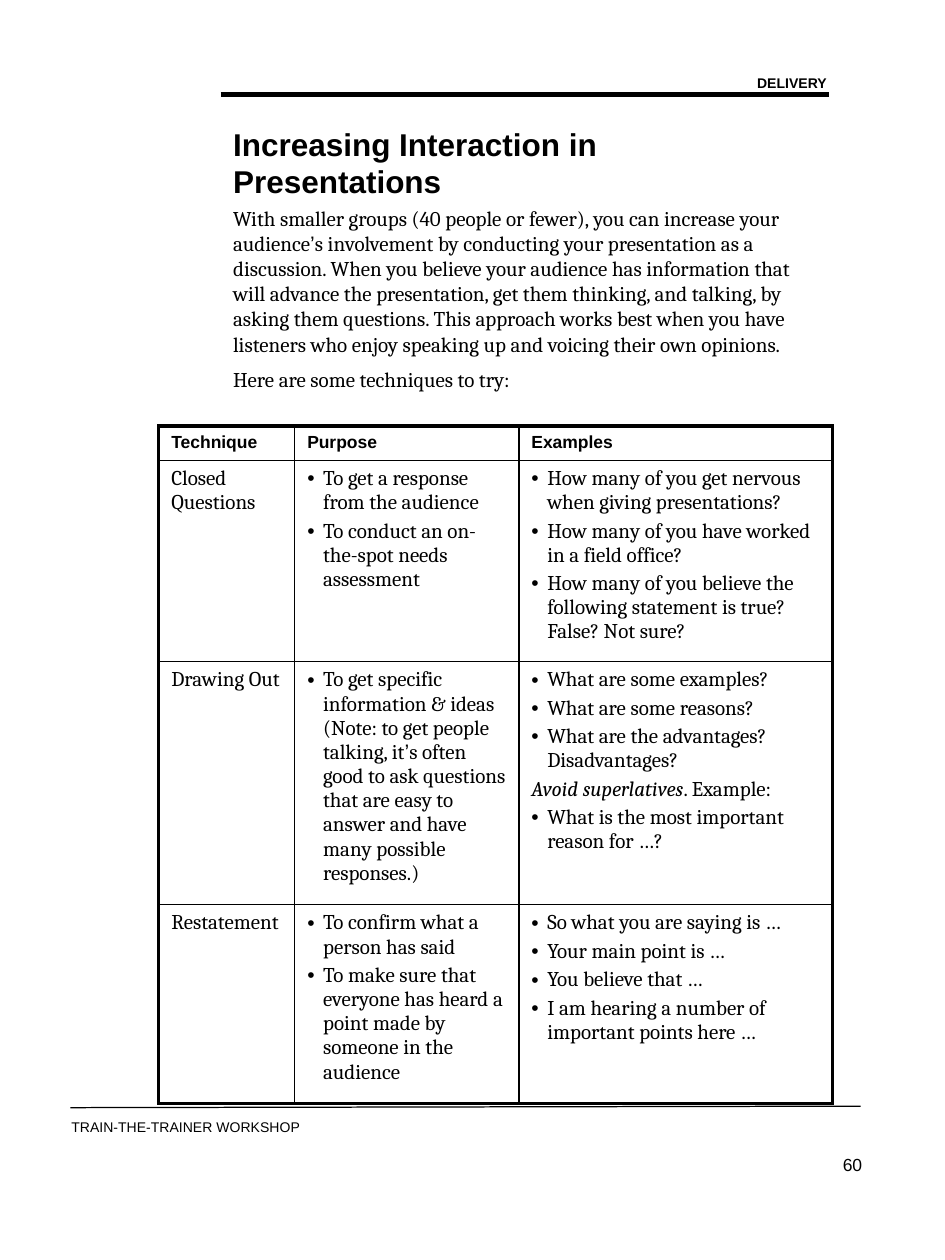
import itertools
from dataclasses import dataclass

import lxml.etree
import pptx
import pptx.dml.color
import pptx.enum.shapes
import pptx.enum.text
import pptx.oxml.ns
import pptx.util

Cm = pptx.util.Cm
Pt = pptx.util.Pt
qn = pptx.oxml.ns.qn
Align = pptx.enum.text.PP_ALIGN
Anchor = pptx.enum.text.MSO_ANCHOR


@dataclass(frozen=True)
class Theme:
    ink: str = "000000"
    sans: str = "Arial"
    serif: str = "Cambria"
    title: float = 18
    body: float = 12
    label: float = 10
    small: float = 8
    thin: float = 1
    thick: float = 2.25


THEME = Theme()
HEADS = ["Technique", "Purpose", "Examples"]
AVOID = "Avoid superlatives"
ROWS = [
    ("Closed Questions",
     ["To get a response from the audience",
      "To conduct an on-the-spot needs assessment"],
     ["How many of you get nervous when giving presentations?",
      "How many of you have worked in a field office?",
      "How many of you believe the following statement is true? "
      "False? Not sure?"]),
    ("Drawing Out",
     ["To get specific information & ideas (Note: to get people talking, "
      "it’s often good to ask questions that are easy to answer and have "
      "many possible responses.)"],
     ["What are some examples?",
      "What are some reasons?",
      "What are the advantages? Disadvantages?",
      AVOID + ". Example:",
      "What is the most important reason for …?"]),
    ("Restatement",
     ["To confirm what a person has said",
      "To make sure that everyone has heard a point made by someone "
      "in the audience"],
     ["So what you are saying is …",
      "Your main point is …",
      "You believe that …",
      "I am hearing a number of important points here …"]),
]
INTRO = [
    "With smaller groups (40 people or fewer), you can increase your "
    "audience’s involvement by conducting your presentation as a discussion. "
    "When you believe your audience has information that will advance the "
    "presentation, get them thinking, and talking, by asking them questions. "
    "This approach works best when you have listeners who enjoy speaking up "
    "and voicing their own opinions.",
    "Here are some techniques to try:",
]


def add_run(para, text, size, face, bold=False, slant=False):
    for mark, chars in itertools.groupby(text, lambda c: c == "’"):
        run = para.add_run()
        run.text = "".join(chars)
        font = run.font
        font.name = THEME.sans if mark else face
        font.size = Pt(size)
        font.bold = bold
        font.italic = slant
        font.color.rgb = pptx.dml.color.RGBColor.from_string(THEME.ink)


def next_para(frame, index, gap):
    if index == 0:
        return frame.paragraphs[0]
    para = frame.add_paragraph()
    para.space_before = Pt(gap)
    return para


def add_text(slide, box, texts, size, face, bold=False,
             align=Align.LEFT, anchor=Anchor.TOP):
    frame = slide.shapes.add_textbox(*map(Cm, box)).text_frame
    frame.word_wrap = True
    frame.vertical_anchor = anchor
    for index, text in enumerate(texts):
        para = next_para(frame, index, size / 2)
        para.alignment = align
        add_run(para, text, size, face, bold)


def add_rule(slide, start, end, width):
    kind = pptx.enum.shapes.MSO_CONNECTOR.STRAIGHT
    rule = slide.shapes.add_connector(kind, *map(Cm, start + end))
    rule.line.width = Pt(width)
    rule.line.color.rgb = pptx.dml.color.RGBColor.from_string(THEME.ink)
    lxml.etree.SubElement(rule.element.spPr, qn("a:effectLst"))


def add_bullet(para, shown):
    props = para._p.get_or_add_pPr()
    props.set("marL", str(Cm(0.32)))
    props.set("indent", str(-Cm(0.32)))
    if shown:
        lxml.etree.SubElement(props, qn("a:buFont"), typeface=THEME.sans)
        lxml.etree.SubElement(props, qn("a:buChar"), char="•")


def set_edges(cell, outer):
    cell.fill.background()
    props = cell._tc.get_or_add_tcPr()
    for spot, side in enumerate("LRTB"):
        width = THEME.thick if side in outer else THEME.thin
        edge = lxml.etree.Element(qn("a:ln" + side), w=str(Pt(width)))
        fill = lxml.etree.SubElement(edge, qn("a:solidFill"))
        lxml.etree.SubElement(fill, qn("a:srgbClr"), val=THEME.ink)
        props.insert(spot, edge)


def fill_list(frame, items):
    for index, text in enumerate(items):
        para = next_para(frame, index, THEME.body / 5)
        note = text.startswith(AVOID)
        add_bullet(para, not note)
        if note:
            add_run(para, AVOID, THEME.body, THEME.serif, slant=True)
            text = text.removeprefix(AVOID)
        add_run(para, text, THEME.body, THEME.serif)


def add_grid(slide, box):
    wide = [2.74, 4.52, 6.32]
    tall = [0.69, 4.06, 4.9, 4.01]
    last = (len(tall) - 1, len(wide) - 1)
    grid = slide.shapes.add_table(len(tall), len(wide), *map(Cm, box)).table
    for col, width in zip(grid.columns, wide):
        col.width = Cm(width)
    for row, height in zip(grid.rows, tall):
        row.height = Cm(height)
    for r, row in enumerate([HEADS] + ROWS):
        for c, value in enumerate(row):
            cell = grid.cell(r, c)
            outer = ("T" * (r == 0) + "B" * (r == last[0])
                     + "L" * (c == 0) + "R" * (c == last[1]))
            set_edges(cell, outer)
            frame = cell.text_frame
            if r == 0:
                add_run(frame.paragraphs[0], value, THEME.label,
                        THEME.sans, bold=True)
            elif c == 0:
                add_run(frame.paragraphs[0], value, THEME.body, THEME.serif)
            else:
                fill_list(frame, value)


def add_header(slide, box):
    left, top, width, height = box
    add_rule(slide, (left, top + height), (left + width, top + height), 3)
    add_text(slide, (left + width - 5.72, top, 5.92, 0.58), ["DELIVERY"],
             THEME.small, THEME.sans, True, Align.RIGHT)


def add_intro(slide, box):
    left, top, width, height = box
    add_text(slide, (left, top, 11.63, 1.47),
             ["Increasing Interaction in Presentations"],
             THEME.title, THEME.sans, True, anchor=Anchor.MIDDLE)
    add_text(slide, (left, top + 1.47, width, height - 1.47), INTRO,
             THEME.body, THEME.serif)


def add_footer(slide, box):
    left, top, width, height = box
    add_rule(slide, (left, top), (left + width, top - 0.03), 0.7)
    add_text(slide, (left - 0.23, top + 0.1, 8.89, 0.58),
             ["TRAIN-THE-TRAINER WORKSHOP"], THEME.small, THEME.sans)
    add_text(slide, (left + width - 3.68, top + 0.81, 3.96, height - 0.81),
             ["60"], THEME.label, THEME.sans, align=Align.RIGHT)


def main():
    deck = pptx.Presentation()
    deck.slide_width = Cm(19.05)
    deck.slide_height = Cm(25.4)
    slide = deck.slides.add_slide(deck.slide_layouts[6])
    add_footer(slide, (1.42, 22.33, 15.93, 2.51))
    add_header(slide, (4.45, 1.37, 12.27, 0.54))
    add_intro(slide, (4.45, 2.54, 12.14, 5.53))
    add_grid(slide, (3.2, 8.59, 13.58, 13.66))
    deck.save("out.pptx")


if __name__ == "__main__":
    main()
